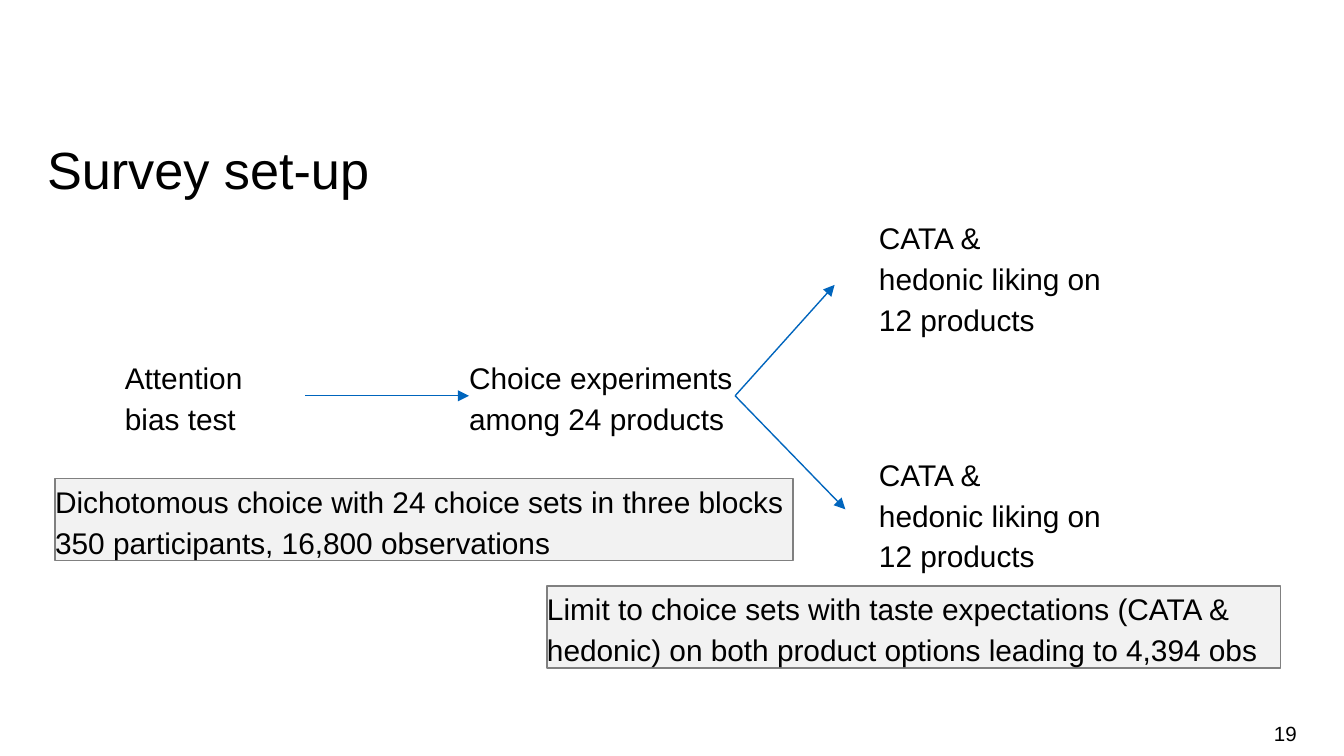
from lxml.etree import SubElement
from pptx import Presentation
from pptx.dml.color import RGBColor
from pptx.enum.shapes import MSO_CONNECTOR, MSO_SHAPE
from pptx.enum.text import MSO_ANCHOR, MSO_AUTO_SIZE, PP_ALIGN
from pptx.oxml.ns import qn
from pptx.util import Inches, Pt

CATA = ["CATA &", "hedonic liking on", "12 products"]


def color(value):
    """Turn a hex string into a colour."""
    return RGBColor.from_string(value)


def write(sp, lines, size=16, spacing=1.14, wrap=False, grow=True):
    """Fill a shape with left-aligned paragraphs and no margins."""
    tf = sp.text_frame
    tf.margin_left = tf.margin_top = tf.margin_right = tf.margin_bottom = 0
    tf.vertical_anchor = MSO_ANCHOR.TOP
    tf.auto_size = MSO_AUTO_SIZE.SHAPE_TO_FIT_TEXT if grow else MSO_AUTO_SIZE.NONE
    tf.word_wrap = wrap
    for i, line in enumerate(lines):
        p = tf.add_paragraph() if i else tf.paragraphs[0]
        p.text = line
        p.alignment = PP_ALIGN.LEFT
        p.line_spacing = spacing
        p.font.size = Pt(size)
        p.font.name = "Arial"
        p.font.color.rgb = color("000000")
    return sp


def add_text(s, x, y, w, h, lines, **style):
    """Add a text box."""
    box = s.shapes.add_textbox(Inches(x), Inches(y), Inches(w), Inches(h))
    return write(box, lines, **style)


def add_note(s, x, y, w, h, lines):
    """Add a grey framed note."""
    sp = s.shapes.add_shape(
        MSO_SHAPE.RECTANGLE, Inches(x), Inches(y), Inches(w), Inches(h))
    sp.shadow.inherit = False
    sp.fill.solid()
    sp.fill.fore_color.rgb = color("F2F2F2")
    sp.line.color.rgb = color("808080")
    sp.line.width = Pt(0.75)
    return write(sp, lines)


def add_arrow(s, source, x, y, target=None):
    """Add an arrow from the right side of a box to a point or another box."""
    line = s.shapes.add_connector(
        MSO_CONNECTOR.STRAIGHT, 0, 0, Inches(x), Inches(y))
    line.begin_connect(source, 3)
    if target is not None:
        line.end_connect(target, 1)
    line.line.color.rgb = color("0065BD")
    line.line.width = Pt(0.75)
    SubElement(line.line._get_or_add_ln(), qn("a:tailEnd"), type="triangle")
    SubElement(line._element.spPr, qn("a:effectLst"))


def add_flow(s, x, y):
    """Add the survey steps and the arrows between them."""
    attention = add_text(s, x, y + 1.04, 1.34, 0.61,
                         ["Attention", "bias test"], wrap=True)
    choice = add_text(s, x + 2.56, y + 1.04, 1.98, 0.61,
                      ["Choice experiments", "among 24 products"])
    add_arrow(s, attention, x + 2.56, y + 1.34, choice)
    for dx, dy in ((5.28, 0.52), (5.36, 2.19)):
        add_arrow(s, choice, x + dx, y + dy)
    for dy in (0, 1.76):
        add_text(s, x + 5.61, y + dy, 1.71, 0.92, CATA)


def add_page_number(s, x, y, w, h, number):
    """Add the page number at the lower right."""
    box = add_text(s, x, y, w, h, [number], size=11, spacing=1.0,
                   wrap=True, grow=False)
    tf = box.text_frame
    tf.margin_top = tf.margin_bottom = Inches(0.05)
    tf.vertical_anchor = MSO_ANCHOR.MIDDLE
    tf.paragraphs[0].alignment = PP_ALIGN.RIGHT


def main():
    """Build the slide."""
    prs = Presentation()
    prs.slide_width, prs.slide_height = Inches(10), Inches(10 * 9 / 16)
    s = prs.slides.add_slide(prs.slide_layouts[6])
    add_page_number(s, 7.41, 5.31, 2.24, 0.3, "19")
    add_text(s, 0.35, 1.04, 9.29, 0.45, ["Survey set-up"],
             size=28, spacing=Pt(32), wrap=True)
    add_flow(s, 0.93, 1.6)
    add_note(s, 0.41, 3.56, 5.49, 0.61,
             ["Dichotomous choice with 24 choice sets in three blocks",
              "350 participants, 16,800 observations"])
    add_note(s, 4.07, 4.36, 5.46, 0.61,
             ["Limit to choice sets with taste expectations (CATA &",
              "hedonic) on both product options leading to 4,394 obs"])
    prs.save("out.pptx")


if __name__ == "__main__":
    main()
